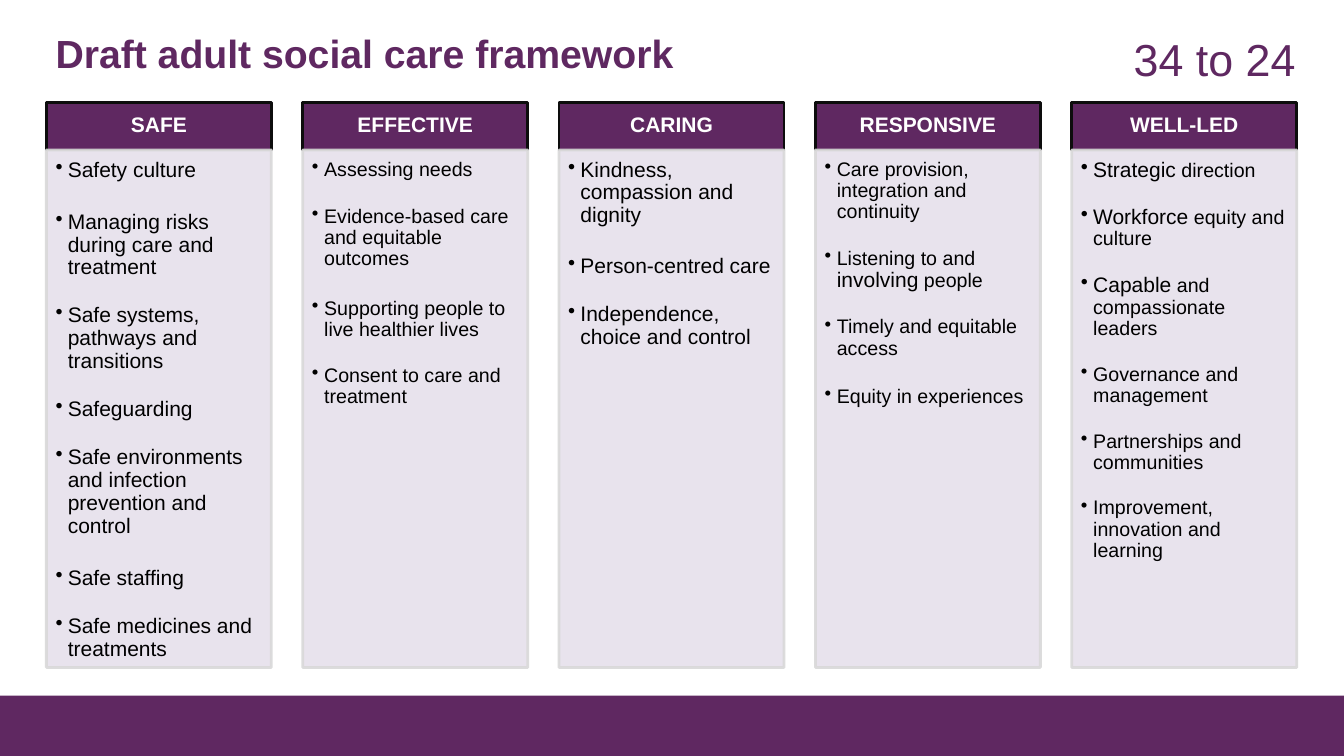
from lxml.etree import SubElement
from pptx import Presentation
from pptx.dml.color import RGBColor
from pptx.enum.shapes import MSO_SHAPE as Preset
from pptx.enum.text import MSO_ANCHOR as Anchor, PP_ALIGN as Align
from pptx.oxml.ns import qn
from pptx.util import Cm, Pt

COLOURS = {
    "plum": "5F2861",
    "lilac": "E6E0EC",
    "grey": "D9D9D9",
    "ink": "0D0D0D",
    "black": "000000",
    "white": "FFFFFF",
}

# Each item is (space before in points, text); words between bars are 15 pt.
PILLARS = [
    ("SAFE", 15, [
        (0, "Safety culture"),
        (21, "Managing risks during care and treatment"),
        (18.25, "Safe systems, pathways and transitions"),
        (18.25, "Safeguarding"),
        (18.25, "Safe environments and infection prevention and control"),
        (21, "Safe staffing"),
        (18.25, "Safe medicines and treatments"),
    ]),
    ("EFFECTIVE", 14, [
        (0, "Assessing needs"),
        (18.5, "Evidence-based care and equitable outcomes"),
        (20.5, "Supporting people to live healthier lives"),
        (17.5, "Consent to care and treatment"),
    ]),
    ("CARING", 15, [
        (0, "Kindness, compassion and dignity"),
        (20.25, "Person-centred care"),
        (18.25, "Independence, choice and control"),
    ]),
    ("RESPONSIVE", 14, [
        (0, "Care provision, integration and continuity"),
        (18.5, "Listening to and |involving| people"),
        (17.5, "Timely and equitable access"),
        (19.25, "Equity in experiences"),
    ]),
    ("WELL-LED", 14, [
        (0, "|Strategic| direction"),
        (17.5, "|Workforce| equity and culture"),
        (17.5, "|Capable| and compassionate leaders"),
        (17.5, "Governance and management"),
        (17.5, "Partnerships and communities"),
        (17.5, "Improvement, innovation and learning"),
    ]),
]


class FrameworkSlide:
    """Draws the elements of the framework slide in one shared style."""

    font_name = "Arial"
    line_spacing = 0.9
    emphasis_size = 15

    def __init__(self, page):
        self.page = page

    def colour(self, name):
        return RGBColor.from_string(COLOURS[name])

    def style(self, para, size, colour, bold=False):
        para.line_spacing = self.line_spacing
        para.font.name = self.font_name
        para.font.size = Pt(size)
        para.font.bold = bold
        para.font.color.rgb = self.colour(colour)

    def frame(self, box, insets, anchor):
        frame = box.text_frame
        frame.word_wrap = True
        frame.vertical_anchor = anchor
        (frame.margin_left, frame.margin_top,
         frame.margin_right, frame.margin_bottom) = map(Cm, insets)
        return frame

    def rectangle(self, left, top, width, height, fill, line=None):
        box = self.page.shapes.add_shape(
            Preset.RECTANGLE, Cm(left), Cm(top), Cm(width), Cm(height))
        box.shadow.inherit = False
        box.fill.solid()
        box.fill.fore_color.rgb = self.colour(fill)
        if line:
            box.line.color.rgb = self.colour(line)
            box.line.width = Pt(2)
        else:
            box.line.fill.background()
        return box

    def label(self, left, top, width, height, text, size, bold=False):
        box = self.page.shapes.add_textbox(
            Cm(left), Cm(top), Cm(width), Cm(height))
        para = self.frame(box, (0.25, 0.13, 0.25, 0.13), Anchor.MIDDLE).paragraphs[0]
        para.text = text
        self.style(para, size, "plum", bold)

    def header(self, left, top, width, height, text):
        box = self.rectangle(left, top, width, height, "plum", "ink")
        para = self.frame(box, (0.3, 0.18, 0.3, 0.18), Anchor.MIDDLE).paragraphs[0]
        para.text = text
        para.alignment = Align.CENTER
        self.style(para, 15, "white", bold=True)

    def panel(self, left, top, width, height, size, items):
        box = self.rectangle(left, top, width, height, "lilac", "grey")
        for tint in box._element.spPr.iter(qn("a:srgbClr")):
            SubElement(tint, qn("a:alpha"), val="90000")
        frame = self.frame(box, (0.23, 0.23, 0.3, 0.36), Anchor.TOP)
        for index, (gap, text) in enumerate(items):
            para = frame.add_paragraph() if index else frame.paragraphs[0]
            self.bullet(para, gap, text, size)

    def bullet(self, para, gap, text, size):
        props = para._p.get_or_add_pPr()
        props.set("marL", str(Cm(0.31)))
        props.set("indent", str(Cm(-0.31)))
        SubElement(props, qn("a:buChar"), char="•")
        para.alignment = Align.LEFT
        if gap:
            para.space_before = Pt(gap)
        self.style(para, size, "black")
        for index, part in enumerate(text.split("|")):
            if part:
                span = para.add_run()
                span.text = part
                if index % 2:
                    span.font.size = Pt(self.emphasis_size)


def main():
    deck = Presentation()
    deck.slide_width, deck.slide_height = Cm(33.87), Cm(19.05)
    slide = FrameworkSlide(deck.slides.add_slide(deck.slide_layouts[6]))

    slide.rectangle(0, 17.53, 33.87, 1.52, "plum")
    slide.label(1.15, 0.61, 31.57, 1.6, "Draft adult social care framework", 28, bold=True)

    first_left, step, width = 1.17, 6.46, 5.67
    header_top, header_height, panel_height = 2.58, 1.2, 13.04
    for index, (name, size, items) in enumerate(PILLARS):
        left = first_left + index * step
        slide.header(left, header_top, width, header_height, name)
        slide.panel(left, header_top + header_height, width, panel_height, size, items)

    slide.label(28.32, 0.75, 5, 1.63, "34 to 24", 32)
    deck.save("out.pptx")


if __name__ == "__main__":
    main()
